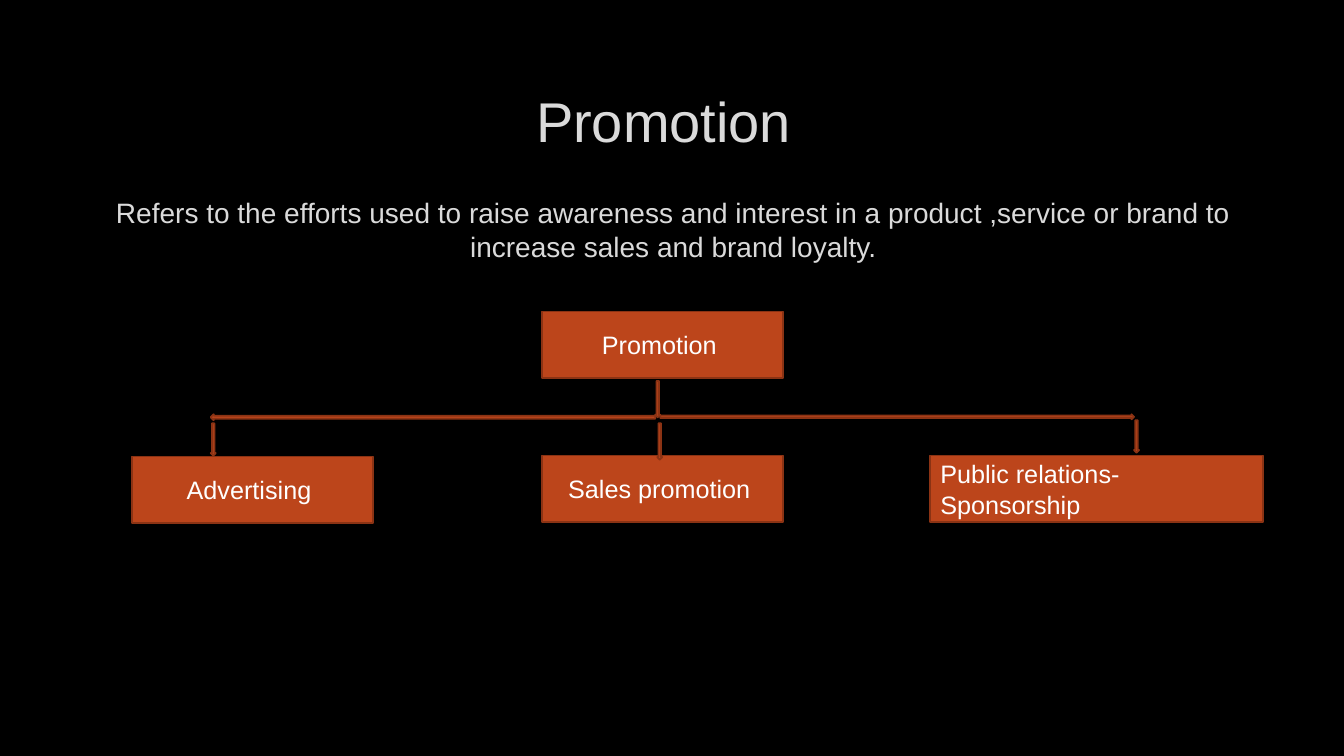
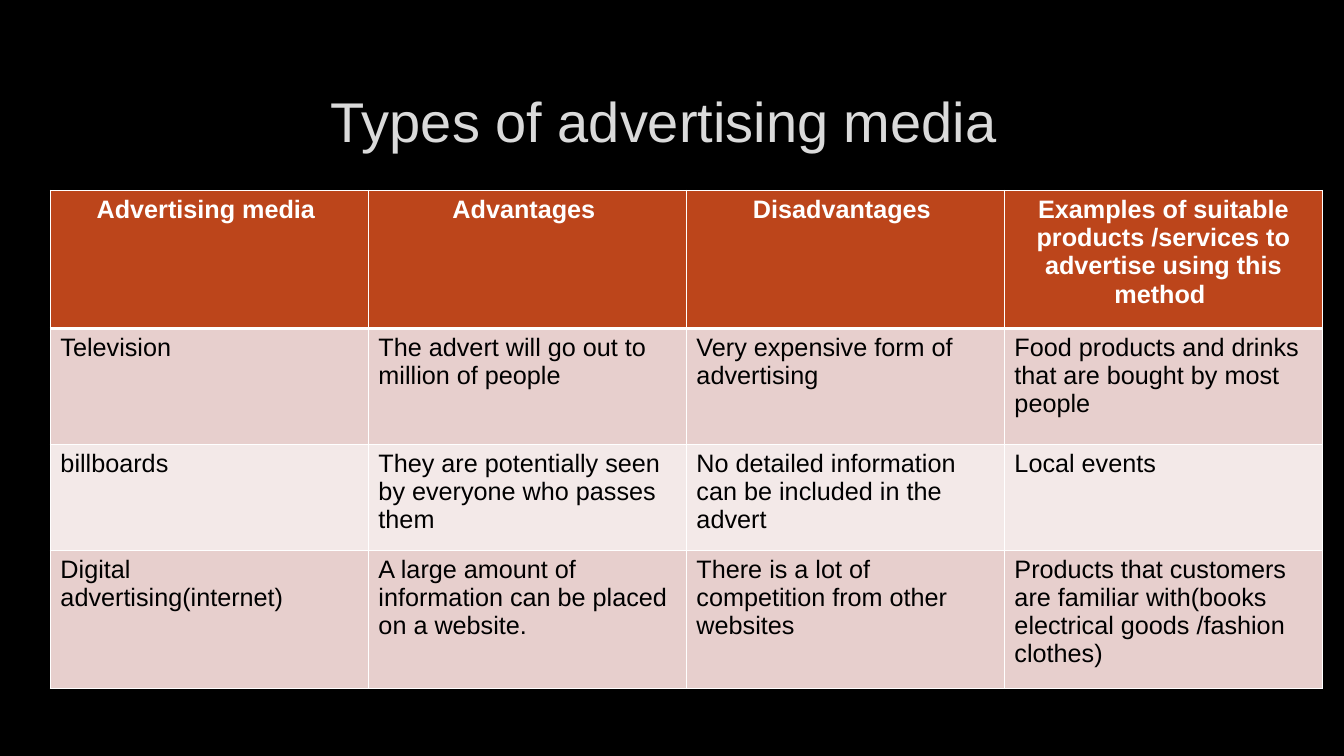
from lxml import etree
from pptx import Presentation
from pptx.dml.color import RGBColor
from pptx.enum.shapes import MSO_SHAPE
from pptx.enum.text import MSO_ANCHOR, PP_ALIGN
from pptx.oxml.ns import qn
from pptx.util import Inches, Pt

CENTER, LEFT = PP_ALIGN.CENTER, PP_ALIGN.LEFT
TOP, MIDDLE = MSO_ANCHOR.TOP, MSO_ANCHOR.MIDDLE
RECTANGLE = MSO_SHAPE.RECTANGLE
DOWN, RIGHT, BACK = MSO_SHAPE.DOWN_ARROW, MSO_SHAPE.RIGHT_ARROW, MSO_SHAPE.LEFT_ARROW

COLUMNS, ROWS = 80, 45
COLORS = {
    "background": "000000",
    "heading": "DADADA",
    "white": "FFFFFF",
    "cell text": "000000",
    "accent": "BC451B",
    "edge": "8B3314",
    "band dark": "E7CFCD",
    "band light": "F3E9E8",
}
FONT = "Arial"
CONTENT_LEFT, CONTENT_TOP, CONTENT_WIDTH = 6, 11.34, 67.92
BOX_WIDTH, BOX_HEIGHT = 14.34, 3.96
STEM = 0.3

CHART_BOXES = [
    ("Promotion ", 32.28, 18.54, BOX_WIDTH, CENTER),
    ("Public relations-Sponsorship", 55.38, 27.12, 19.8, LEFT),
    ("Sales promotion ", 32.28, 27.12, BOX_WIDTH, CENTER),
    ("Advertising ", 7.86, 27.18, BOX_WIDTH, CENTER),
]
CHART_ARROWS = [
    (DOWN, 39, 22.68, STEM, 2.16),
    (RIGHT, 39.3, 24.66, 28.2, STEM),
    (BACK, 12.54, 24.66, 26.46, 0.36),
    (DOWN, 12.54, 25.2, STEM, 1.92),
    (DOWN, 39.12, 25.2, STEM, 2.16),
    (DOWN, 67.5, 25.02, STEM, 1.92),
]
MEDIA_ROWS = [
    ["Advertising media ", "Advantages ", "Disadvantages ",
     "Examples of suitable products /services to advertise using this method "],
    ["Television", "The advert will go out to million of people",
     "Very expensive form of advertising",
     "Food products and drinks that are bought by most people"],
    ["billboards", "They are potentially seen by everyone who passes them",
     "No detailed information can be included in the advert", "Local events"],
    ["Digital advertising(internet)",
     "A large amount of information can be placed on a website.",
     "There is a lot of competition from other websites",
     "Products that customers are familiar with(books electrical goods /fashion clothes)"],
]
MEDIA_HEIGHTS = [8.22, 6.9, 6.3, 8.22]


def apply(target, values):
    """Set each named attribute of the target."""
    for name, value in values.items():
        setattr(target, name, value)


class Deck:
    """Hold the shared style and the current slide."""

    def __init__(self):
        self.presentation = Presentation()
        apply(self.presentation, {"slide_width": Inches(13.33), "slide_height": Inches(7.5)})
        self.column = self.presentation.slide_width / COLUMNS
        self.row = self.presentation.slide_height / ROWS
        self.slide = None

    def place(self, left, top, width, height):
        """Turn grid units into slide lengths."""
        return (round(left * self.column), round(top * self.row),
                round(width * self.column), round(height * self.row))

    def paint(self, fill, color):
        """Give a fill one of the named colours."""
        fill.solid()
        fill.fore_color.rgb = RGBColor.from_string(COLORS[color])

    def label(self, frame, text, size, color, align, bold=False, **spacing):
        """Put one styled paragraph in a text frame."""
        paragraph = frame.paragraphs[0]
        apply(paragraph, {"alignment": align, **spacing})
        run = paragraph.add_run()
        run.text = text
        apply(run.font, {"name": FONT, "size": Pt(size), "bold": bold})
        run.font.color.rgb = RGBColor.from_string(COLORS[color])

    def add_slide(self, title):
        """Start a slide with the shared background and title."""
        self.slide = self.presentation.slides.add_slide(self.presentation.slide_layouts[6])
        self.paint(self.slide.background.fill, "background")
        self.text(title, 4, 6.36, 40, MIDDLE)

    def text(self, text, top, height, size, anchor, indent=0.1, **spacing):
        """Add centred text across the content width."""
        box = self.slide.shapes.add_textbox(
            *self.place(CONTENT_LEFT, top, CONTENT_WIDTH, height))
        apply(box.text_frame, {"word_wrap": True, "vertical_anchor": anchor,
                               "margin_left": Inches(indent)})
        self.label(box.text_frame, text, size, "heading", CENTER, **spacing)

    def shape(self, preset, left, top, width, height):
        """Add an outlined accent shape."""
        shape = self.slide.shapes.add_shape(preset, *self.place(left, top, width, height))
        shape.shadow.inherit = False
        self.paint(shape.fill, "accent")
        self.paint(shape.line.fill, "edge")
        shape.line.width = Pt(1.25)
        return shape

    def box(self, label, left, top, width, align):
        """Add a labelled box of the organisation chart."""
        frame = self.shape(RECTANGLE, left, top, width, BOX_HEIGHT).text_frame
        apply(frame, {"word_wrap": True, "vertical_anchor": MIDDLE})
        self.label(frame, label, 18, "white", align)

    def borders(self, cell, widths):
        """Draw white borders, given as points by side."""
        properties = cell._tc.get_or_add_tcPr()
        for position, (side, points) in enumerate(widths.items()):
            line = etree.Element(qn("a:ln" + side), w=str(Pt(points)))
            fill = etree.SubElement(line, qn("a:solidFill"))
            etree.SubElement(fill, qn("a:srgbClr"), val=COLORS["white"])
            properties.insert(position, line)

    def table(self, rows, heights, left, top, width):
        """Add a table with a header row and alternating bands."""
        table = self.slide.shapes.add_table(
            len(rows), len(rows[0]), *self.place(left, top, width, sum(heights))).table
        for index, (texts, height) in enumerate(zip(rows, heights)):
            table.rows[index].height = round(height * self.row)
            header = index == 0
            band = "accent" if header else "band dark" if index % 2 else "band light"
            color, align = ("white", CENTER) if header else ("cell text", LEFT)
            widths = {"L": 1, "R": 1, "T": 3 if index == 1 else 1, "B": 3 if header else 1}
            for cell, text in zip(table.rows[index].cells, texts):
                self.paint(cell.fill, band)
                self.borders(cell, widths)
                self.label(cell.text_frame, text, 18, color, align, header)


def main():
    """Build both slides and save them."""
    deck = Deck()
    deck.add_slide("Promotion ")
    deck.text("Refers to the efforts used to raise awareness and interest in a product "
              ",service or brand to increase sales and brand loyalty.",
              CONTENT_TOP, 26.64, 20, TOP, 0.14, space_before=Pt(4), space_after=Pt(6))
    for box in CHART_BOXES:
        deck.box(*box)
    for arrow in CHART_ARROWS:
        deck.shape(*arrow)
    deck.add_slide("Types of advertising media ")
    deck.table(MEDIA_ROWS, MEDIA_HEIGHTS, 3, CONTENT_TOP, 75.72)
    deck.presentation.save("out.pptx")


if __name__ == "__main__":
    main()
